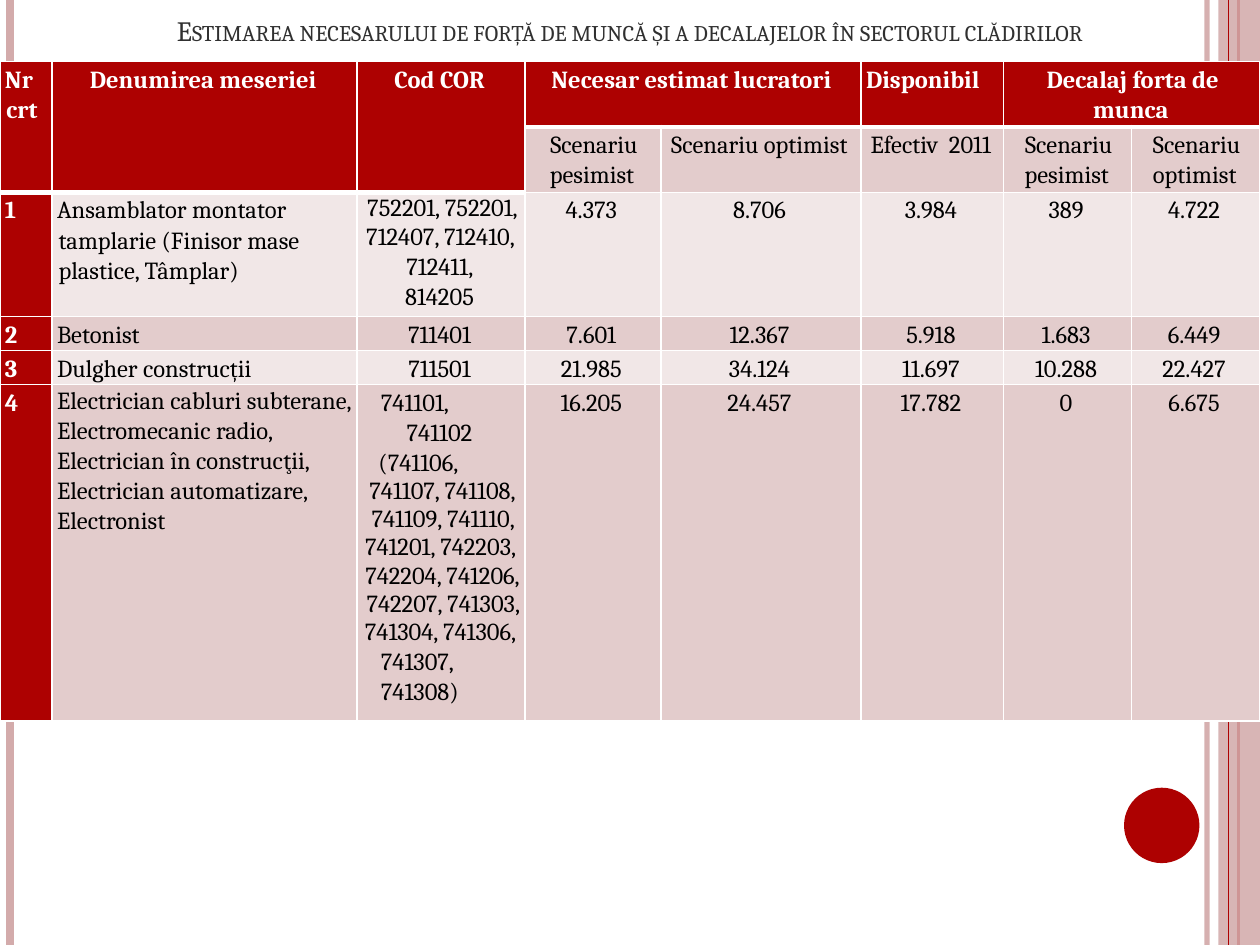
import collections

import lxml.etree
import pptx
import pptx.dml.color
import pptx.enum.shapes
import pptx.enum.text
import pptx.oxml
import pptx.oxml.ns
import pptx.util

Cm = pptx.util.Cm
Pt = pptx.util.Pt
qn = pptx.oxml.ns.qn
CENTER = pptx.enum.text.PP_ALIGN.CENTER
LEFT = pptx.enum.text.PP_ALIGN.LEFT

COLORS = {
    "red": "AD0101",
    "rose": "D3ABAB",
    "dark band": "E3CCCC",
    "light band": "F1E7E7",
    "white": "FFFFFF",
    "black": "000000",
    "title": "303030",
}

WIDTH, HEIGHT = 25.4, 19.05
COLUMN_WIDTHS = [1.05, 6.15, 3.38, 2.74, 4.04, 2.87, 2.58, 2.58]
ROW_HEIGHTS = [1.24, 1.32, 2.39, 0.67, 0.66, 6.48]

Line = collections.namedtuple("Line", "text align spacing indent", defaults=(CENTER, 1.07, 0.03))

TITLE = "Estimarea necesarului de forță de muncă și a decalajelor în sectorul clădirilor"
# Each header: row, column, rows spanned, columns spanned, line
HEADERS = [
    (0, 0, 2, 1, Line("Nr crt", LEFT)),
    (0, 1, 2, 1, Line("Denumirea meseriei")),
    (0, 2, 2, 1, Line("Cod COR")),
    (0, 3, 1, 2, Line("Necesar estimat lucratori")),
    (0, 5, 1, 1, Line("Disponibil", LEFT)),
    (0, 6, 1, 2, Line("Decalaj forta de munca")),
]
SUBHEADERS = ["Scenariu pesimist", "Scenariu optimist", "Efectiv  2011",
              "Scenariu pesimist", "Scenariu optimist"]
# Each trade: name lines, code lines, figures
TRADES = [
    ([Line("Ansamblator montator tamplarie (Finisor mase plastice, Tâmplar)", LEFT)],
     [Line("752201, 752201, 712407, 712410,", spacing=1.0), Line("712411,"), Line("814205")],
     ["4.373", "8.706", "3.984", "389", "4.722"]),
    ([Line("Betonist", LEFT)], [Line("711401")],
     ["7.601", "12.367", "5.918", "1.683", "6.449"]),
    ([Line("Dulgher construcții", LEFT)], [Line("711501")],
     ["21.985", "34.124", "11.697", "10.288", "22.427"]),
    ([Line("Electrician cabluri subterane,", LEFT, 1.0),
      Line("Electromecanic radio,", LEFT),
      Line("Electrician în construcţii,", LEFT),
      Line("Electrician automatizare,", LEFT),
      Line("Electronist", LEFT)],
     [Line("741101,", LEFT, indent=0.41),
      Line("741102"),
      Line("(741106,", LEFT, indent=0.36),
      Line("741107, 741108, 741109, 741110, 741201, 742203,", spacing=1.0),
      Line("742204, 741206, 742207, 741303, 741304, 741306,", spacing=1.0),
      Line("741307,", LEFT, indent=0.41),
      Line("741308)", LEFT, indent=0.41)],
     ["16.205", "24.457", "17.782", "0", "6.675"]),
]


def rgb(name):
    return pptx.dml.color.RGBColor.from_string(COLORS[name])


class SlideBuilder:
    font_name = "Cambria"

    def __init__(self, slide):
        self.slide = slide

    def set_opacity(self, fill_parent, percent):
        color = fill_parent.find(".//" + qn("a:srgbClr"))
        lxml.etree.SubElement(color, qn("a:alpha"), val=str(percent * 1000))

    def format_run(self, run, size, color, bold=False):
        run.font.name = self.font_name
        run.font.size = Pt(size)
        run.font.bold = bold
        run.font.color.rgb = rgb(color)

    def vertical_line(self, x, color, width, opacity=100):
        line = self.slide.shapes.add_connector(
            pptx.enum.shapes.MSO_CONNECTOR.STRAIGHT, Cm(x), Cm(0), Cm(x), Cm(HEIGHT))
        line.line.color.rgb = rgb(color)
        line.line.width = Pt(width)
        properties = line._element.spPr
        if opacity < 100:
            self.set_opacity(properties, opacity)
        lxml.etree.SubElement(properties, qn("a:effectLst"))

    def filled_shape(self, kind, left, top, width, height, color, opacity=100):
        shape = self.slide.shapes.add_shape(kind, Cm(left), Cm(top), Cm(width), Cm(height))
        shape.shadow.inherit = False
        shape.fill.solid()
        shape.fill.fore_color.rgb = rgb(color)
        shape.line.fill.background()
        if opacity < 100:
            self.set_opacity(shape._element.spPr, opacity)

    def title(self, text, height):
        frame = self.slide.shapes.add_textbox(0, 0, Cm(WIDTH), Cm(height)).text_frame
        frame.word_wrap = True
        frame.vertical_anchor = pptx.enum.text.MSO_ANCHOR.BOTTOM
        frame.text = text
        paragraph = frame.paragraphs[0]
        paragraph.alignment = CENTER
        run = paragraph.runs[0]
        self.format_run(run, 16, "title")
        run.font._element.set("cap", "small")

    def table(self, top, column_widths, row_heights):
        table = self.slide.shapes.add_table(
            len(row_heights), len(column_widths), 0, Cm(top),
            Cm(sum(column_widths)), Cm(sum(row_heights))).table
        table.first_row = table.horz_banding = False
        for column, width in zip(table.columns, column_widths):
            column.width = Cm(width)
        for row, height in zip(table.rows, row_heights):
            row.height = Cm(height)
        return table

    def borders(self, cell, **widths):
        """Draw white borders; each keyword is a side (L, R, T, B) with its width in points."""
        properties = cell._tc.get_or_add_tcPr()
        for side, width in widths.items():
            border = lxml.etree.SubElement(properties, qn("a:ln" + side), w=str(Pt(width)))
            fill = lxml.etree.SubElement(border, qn("a:solidFill"))
            lxml.etree.SubElement(fill, qn("a:srgbClr"), val=COLORS["white"])

    def cell(self, cell, lines, fill, color="black", bold=False):
        cell.margin_left, cell.margin_right = Cm(0.1), Cm(0.05)
        cell.margin_top, cell.margin_bottom = Cm(0.05), 0
        cell.fill.solid()
        cell.fill.fore_color.rgb = rgb(fill)
        # Centred lines end in a space, which wraps and centres with the text
        cell.text_frame.text = "\n".join(
            line.text + (" " if line.align == CENTER else "") for line in lines)
        for paragraph, line in zip(cell.text_frame.paragraphs, lines):
            paragraph.alignment = line.align
            paragraph.line_spacing = line.spacing
            properties = paragraph._p.get_or_add_pPr()
            properties.set("marL", str(Cm(line.indent)))
            properties.set("indent", str(Cm(-0.03)))
            self.format_run(paragraph.runs[0], 14, color, bold)


def add_decoration(builder):
    shapes = pptx.enum.shapes.MSO_SHAPE
    builder.vertical_line(24.33, "rose", 3, 93)
    builder.vertical_line(0.2, "rose", 4.5)
    builder.vertical_line(24.97, "red", 1.5)
    builder.filled_shape(shapes.RECTANGLE, 24.56, 0, 0.84, HEIGHT, "rose", 87)
    builder.vertical_line(24.77, "red", 0.75)
    builder.filled_shape(shapes.OVAL, 22.66, 15.88, 1.52, 1.52, "red")


def add_trades_table(builder):
    table = builder.table(1.24, COLUMN_WIDTHS, ROW_HEIGHTS)
    for row in range(len(ROW_HEIGHTS)):
        for column in range(len(COLUMN_WIDTHS)):
            under_header = row == 0 or (row == 1 and column < 3)
            top = {"T": 1} if row == 0 else {}
            builder.borders(table.cell(row, column), L=1, R=1, **top, B=3 if under_header else 1)

    for row, column, rows, columns, line in HEADERS:
        cell = table.cell(row, column)
        if rows * columns > 1:
            cell.merge(table.cell(row + rows - 1, column + columns - 1))
        builder.cell(cell, [line], "red", "white", True)
    for column, text in enumerate(SUBHEADERS, 3):
        builder.cell(table.cell(1, column), [Line(text)], "dark band")

    for number, (names, codes, figures) in enumerate(TRADES, 1):
        row = number + 1
        band = "light band" if number % 2 else "dark band"
        builder.cell(table.cell(row, 0), [Line(str(number), LEFT)], "red", "white", True)
        contents = [names, codes] + [[Line(figure)] for figure in figures]
        for column, lines in enumerate(contents, 1):
            builder.cell(table.cell(row, column), lines, band)


def main():
    presentation = pptx.Presentation()
    presentation.slide_width, presentation.slide_height = Cm(WIDTH), Cm(HEIGHT)
    builder = SlideBuilder(presentation.slides.add_slide(presentation.slide_layouts[6]))
    add_decoration(builder)
    builder.title(TITLE, 1.07)
    add_trades_table(builder)
    presentation.save("out.pptx")


if __name__ == "__main__":
    main()
